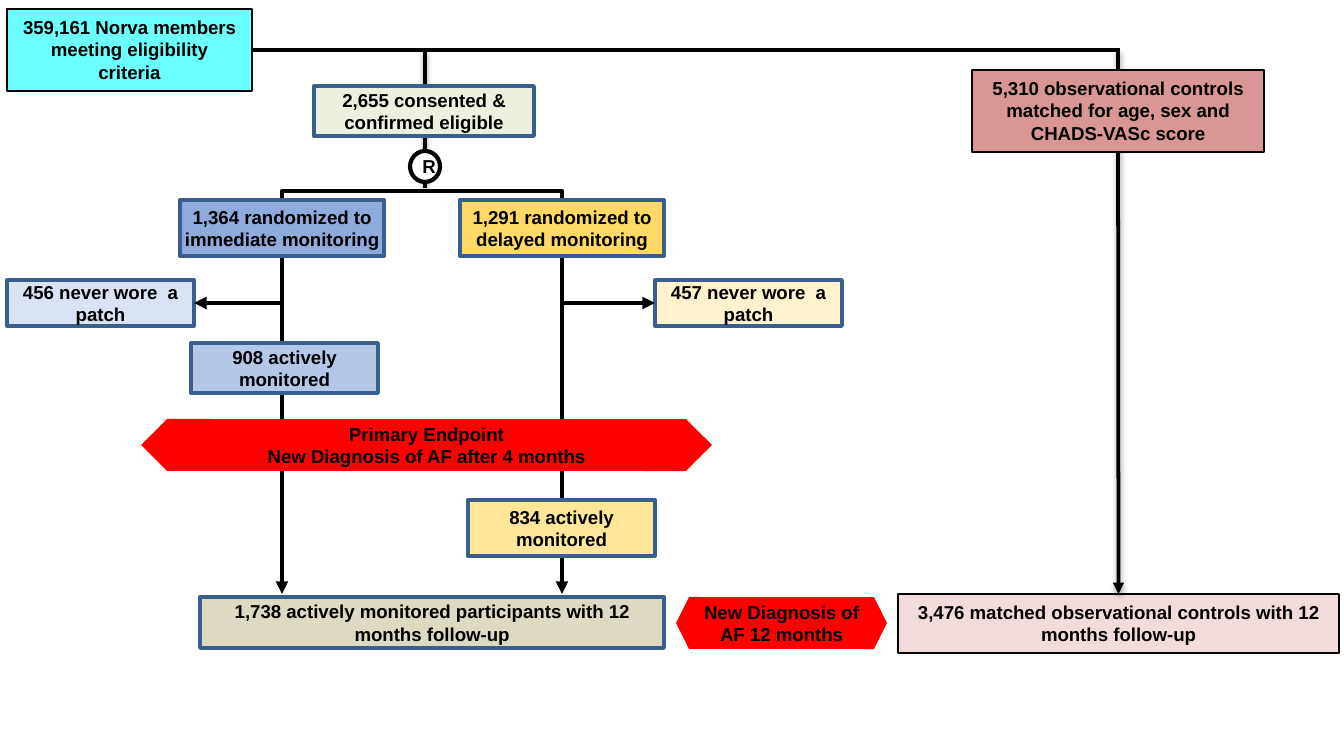
import pptx
import pptx.dml.color
import pptx.enum.shapes
import pptx.enum.text
import pptx.oxml
import pptx.oxml.ns
import pptx.util
from dataclasses import dataclass

SCALE = 914400 / 134.4
SHAPE = pptx.enum.shapes.MSO_SHAPE
ANCHOR = pptx.enum.text.MSO_ANCHOR
AUTO_SIZE = pptx.enum.text.MSO_AUTO_SIZE


@dataclass(frozen=True)
class Theme:
    font: str = "Arial"
    text_size: float = 10
    ink: str = "000000"
    paper: str = "FFFFFF"
    border: str = "3A5F8C"
    enrolled: str = "6BFFFD"
    consented: str = "EBF1DE"
    controls: str = "D99694"
    controls_followed: str = "F2DCDB"
    immediate: tuple = ("8FAADC", "DAE3F3", "B4C7E7")
    delayed: tuple = ("FFD966", "FFF2CC", "FFE699")
    followed: str = "DDD9C3"
    endpoint: str = "FF0000"
    thin: float = 0.75
    medium: float = 2
    thick: float = 2.25


THEME = Theme()
FITTED = {"vertical_anchor": ANCHOR.TOP, "auto_size": AUTO_SIZE.SHAPE_TO_FIT_TEXT}
TIGHT = {"vertical_anchor": ANCHOR.MIDDLE, "margin_left": 0, "margin_top": 0,
         "margin_right": 0, "margin_bottom": 0}
CENTERED = {"vertical_anchor": ANCHOR.MIDDLE}


def px(value):
    return pptx.util.Emu(round(value * SCALE))


def color(value):
    return pptx.dml.color.RGBColor.from_string(value)


def apply_format(target, values):
    for name, value in values.items():
        setattr(target, name, value)


def add_text(shape, lines, frame_format):
    text_frame = shape.text_frame
    apply_format(text_frame, {"word_wrap": True, **frame_format})
    for index, line in enumerate(lines):
        paragraph = text_frame.add_paragraph() if index else text_frame.paragraphs[0]
        paragraph.text = line
        paragraph.alignment = pptx.enum.text.PP_ALIGN.CENTER
        apply_format(paragraph.font, {"name": THEME.font, "bold": True,
                                      "size": pptx.util.Pt(THEME.text_size)})
        paragraph.font.color.rgb = color(THEME.ink)


def add_box(parent, box, fill, line=None, width=THEME.medium, lines=(),
            frame_format=TIGHT, kind=SHAPE.RECTANGLE):
    shape = parent.shapes.add_shape(kind, *map(px, box))
    shape.shadow.inherit = False
    shape.fill.solid()
    shape.fill.fore_color.rgb = color(fill)
    if line:
        shape.line.color.rgb = color(line)
        shape.line.width = pptx.util.Pt(width)
    else:
        shape.line.fill.background()
    if lines:
        add_text(shape, lines, frame_format)
    return shape


def add_line(slide, start, end, width, arrow=False, shadow=False, join=None):
    connector = slide.shapes.add_connector(
        pptx.enum.shapes.MSO_CONNECTOR.STRAIGHT, *map(px, start + end))
    connector.line.color.rgb = color(THEME.ink)
    connector.line.width = pptx.util.Pt(width)
    if join:
        connector.end_connect(*join)
    if arrow:
        tail = pptx.oxml.parse_xml(
            f'<a:tailEnd {pptx.oxml.ns.nsdecls("a")} type="triangle"/>')
        connector.line._get_or_add_ln().append(tail)
    shadow_xml = (
        '<a:outerShdw blurRad="39370" dist="20320" dir="5400000" rotWithShape="0">'
        f'<a:srgbClr val="{THEME.ink}"><a:alpha val="38000"/></a:srgbClr>'
        '</a:outerShdw>') if shadow else ""
    connector._element.spPr.append(pptx.oxml.parse_xml(
        f'<a:effectLst {pptx.oxml.ns.nsdecls("a")}>{shadow_xml}</a:effectLst>'))


def draw_controls(slide, box):
    left, top, width, height = box
    followed = add_box(
        slide, (left, top + height - 59, width, 59), THEME.controls_followed,
        THEME.ink, THEME.thin,
        ["3,476 matched observational controls with 12 months follow-up"], FITTED)
    add_line(slide, (left + 220, top), (left + 220, top + height - 59),
             THEME.medium, arrow=True, shadow=True, join=(followed, 0))
    add_box(slide, (left + 74, top + 20, 292, 82), THEME.controls, THEME.ink, THEME.thin,
            ["5,310 observational controls matched for age, sex and CHADS-VASc score"],
            FITTED)


def draw_consent(slide, box):
    left, top, width, height = box
    axis = left + width // 2 + 1
    add_line(slide, (axis, top), (axis, top + height), THEME.medium, shadow=True)
    add_box(slide, (left, top + 36, width, 50), THEME.consented, THEME.border,
            lines=["2,655 consented & confirmed eligible"])
    add_box(slide, (axis - 15, top + 101, 30, 31), THEME.paper, THEME.ink, THEME.thick,
            ["R"], CENTERED, SHAPE.OVAL)


def draw_arms(slide, box):
    left, top, width, height = box
    axes = (left + 275, left + 555)
    arms = (
        (axes[0], left, 3, 149, THEME.immediate, "1,364 randomized to immediate monitoring",
         "456 never wore  a patch", (184, 152, 50), "908 actively monitored"),
        (axes[1], left + width - 187, 1, -149, THEME.delayed,
         "1,291 randomized to delayed monitoring",
         "457 never wore  a patch", (461, 309, 56), "834 actively monitored"),
    )
    for axis, patch_left, side, reach, fills, allocated, unworn, place, monitored in arms:
        patch = add_box(slide, (patch_left, top + 89, 187, 46), fills[1],
                        THEME.border, lines=[unworn])
        edge = patch_left + (187 if side == 3 else 0)
        add_line(slide, (edge + reach, top + 112), (edge, top + 112), THEME.thick,
                 arrow=True, join=(patch, side))
    add_box(slide, (axes[0], top, axes[1] - axes[0], 245), THEME.paper,
            THEME.ink, THEME.thick)
    for axis, patch_left, side, reach, fills, allocated, unworn, place, monitored in arms:
        offset, drop, tall = place
        add_box(slide, (axis - 102, top + 9, 204, 56), fills[0], THEME.border,
                lines=[allocated])
        add_line(slide, (axis, top + 254), (axis, top + height), THEME.thick, arrow=True)
        add_box(slide, (left + offset, top + drop, 187, tall), fills[2],
                THEME.border, lines=[monitored])


def draw_follow_up(slide, box):
    add_box(slide, box, THEME.followed, THEME.border,
            lines=["1,738 actively monitored participants with 12 months follow-up"])


def draw_endpoint(slide, box, inset, head, lines):
    left, top, width, height = box
    group = slide.shapes.add_group_shape()
    add_box(group, (left + width - head, top, head, height), THEME.endpoint,
            kind=SHAPE.PENTAGON)
    add_box(group, (left + inset, top, width - 2 * inset, height), THEME.endpoint,
            lines=lines)
    point = add_box(group, (left, top, head, height), THEME.endpoint, kind=SHAPE.PENTAGON)
    point.rotation = 180


def draw_enrollment(slide, box, branch, end):
    left, top, width, height = box
    middle = top + height // 2
    members = add_box(slide, box, THEME.enrolled, THEME.ink, THEME.thin,
                      ["359,161 Norva members meeting eligibility criteria"], FITTED)
    add_line(slide, (branch, middle), (end, middle), THEME.medium)
    add_line(slide, (branch, middle), (left + width, middle), THEME.medium,
             join=(members, 3))


def main():
    presentation = pptx.Presentation()
    apply_format(presentation, {"slide_width": px(1344), "slide_height": px(756)})
    slide = presentation.slides.add_slide(presentation.slide_layouts[6])
    draw_controls(slide, (898, 50, 441, 603))
    draw_consent(slide, (314, 50, 220, 138))
    draw_arms(slide, (7, 191, 835, 403))
    draw_follow_up(slide, (200, 597, 464, 51))
    draw_endpoint(slide, (141, 419, 571, 52), 54, 70,
                  ["Primary Endpoint", "New Diagnosis of AF after 4 months"])
    draw_endpoint(slide, (676, 597, 211, 52), 19, 26, ["New Diagnosis of AF 12 months"])
    draw_enrollment(slide, (7, 9, 245, 82), 427, 1120)
    presentation.save("out.pptx")


if __name__ == "__main__":
    main()
